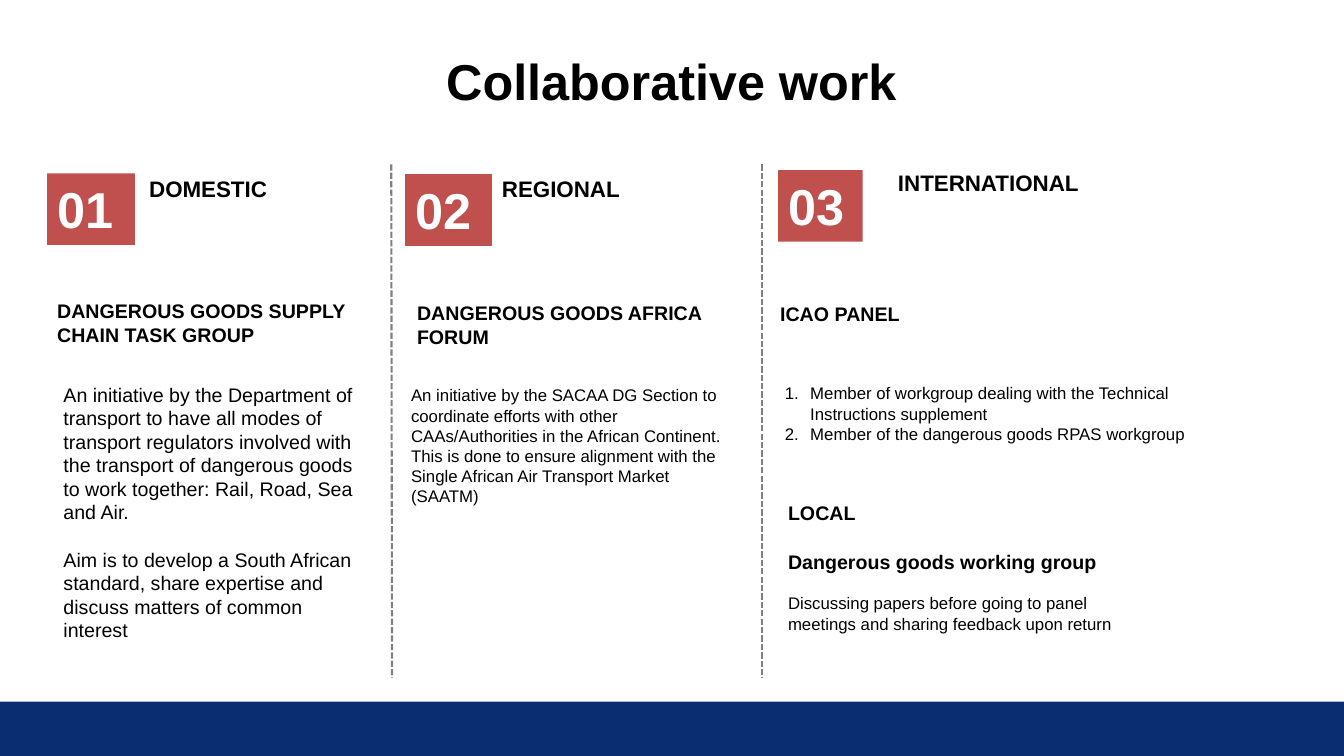
from dataclasses import dataclass

import pptx
import pptx.dml.color
import pptx.enum.dml
import pptx.enum.shapes
import pptx.enum.text
import pptx.oxml.ns
import pptx.presentation
import pptx.shapes.autoshape
import pptx.slide
import pptx.util
from lxml import etree

BLACK = pptx.dml.color.RGBColor(0x00, 0x00, 0x00)
WHITE = pptx.dml.color.RGBColor(0xFF, 0xFF, 0xFF)
RED = pptx.dml.color.RGBColor(0xC0, 0x50, 0x4D)
NAVY = pptx.dml.color.RGBColor(0x0A, 0x2C, 0x71)
GRAY = pptx.dml.color.RGBColor(0x80, 0x80, 0x80)

SLIDE_WIDTH, SLIDE_HEIGHT = 33.87, 19.05
FOOTER_TOP = 17.68
DIVIDER_TOP, DIVIDER_BOTTOM = 4.14, 17.09
DIVIDERS = ((9.86, 9.88), (19.2, 19.2))


@dataclass(frozen=True)
class Box:
    left: float
    top: float
    width: float
    height: float

    def lengths(self) -> list[pptx.util.Length]:
        return [pptx.util.Cm(value) for value in (self.left, self.top, self.width, self.height)]


@dataclass(frozen=True)
class Column:
    number: str
    badge: Box
    scope: str
    scope_box: Box
    group: str
    group_box: Box
    details: tuple[str, ...]
    details_box: Box
    details_size: float = 12
    details_gap: float = 0
    numbered: bool = False
    outlined: bool = False


COLUMNS = (
    Column(
        "01", Box(1.19, 4.37, 2.21, 1.8),
        "DOMESTIC", Box(3.51, 4.29, 6.4, 0.94),
        "DANGEROUS GOODS SUPPLY CHAIN TASK GROUP", Box(1.19, 7.42, 8.18, 1.45),
        (
            "An initiative by the Department of transport to have all modes of transport regulators "
            "involved with the transport of dangerous goods to work together: Rail, Road, Sea and Air.",
            "Aim is to develop a South African standard, share expertise and discuss matters of common interest",
        ),
        Box(1.35, 9.52, 8.18, 7.57), details_size=14, details_gap=16.8,
    ),
    Column(
        "02", Box(10.21, 4.39, 2.18, 1.8),
        "REGIONAL", Box(12.4, 4.29, 6.83, 0.94),
        "DANGEROUS GOODS AFRICA FORUM", Box(10.26, 7.47, 8.74, 1.47),
        (
            "An initiative by the SACAA DG Section to coordinate efforts with other CAAs/Authorities "
            "in the African Continent. This is done to ensure alignment with the Single African Air "
            "Transport Market (SAATM)",
        ),
        Box(10.11, 9.58, 8.76, 2.82), outlined=True,
    ),
    Column(
        "03", Box(19.61, 4.29, 2.13, 1.8),
        "INTERNATIONAL", Box(22.38, 4.14, 8.2, 0.94),
        "ICAO PANEL", Box(19.41, 7.49, 10.49, 0.86),
        (
            "Member of workgroup dealing with the Technical Instructions supplement",
            "Member of the dangerous goods RPAS workgroup",
        ),
        Box(19.53, 9.53, 11.05, 1.8), numbered=True,
    ),
)


def write_text(
    shape: pptx.shapes.autoshape.Shape,
    *texts: str,
    size: float,
    bold: bool = False,
    color: pptx.dml.color.RGBColor = BLACK,
    align: pptx.enum.text.PP_ALIGN = pptx.enum.text.PP_ALIGN.LEFT,
    gap: float = 0,
    line_spacing: float | None = None,
    numbered: bool = False,
) -> None:
    frame = shape.text_frame
    frame.word_wrap = True
    frame.auto_size = pptx.enum.text.MSO_AUTO_SIZE.SHAPE_TO_FIT_TEXT
    frame.vertical_anchor = pptx.enum.text.MSO_ANCHOR.TOP
    for index, text in enumerate(texts):
        paragraph = frame.add_paragraph() if index else frame.paragraphs[0]
        paragraph.alignment = align
        if line_spacing:
            paragraph.line_spacing = line_spacing
        if index and gap:
            paragraph.space_before = pptx.util.Pt(gap)
        if numbered:
            properties = paragraph._p.get_or_add_pPr()
            indent = pptx.util.Cm(0.64)
            properties.set("marL", str(indent))
            properties.set("indent", str(-indent))
            etree.SubElement(properties, pptx.oxml.ns.qn("a:buAutoNum"), type="arabicPeriod")
        run = paragraph.add_run()
        run.text = text
        run.font.name = "Arial"
        run.font.size = pptx.util.Pt(size)
        run.font.bold = bold
        run.font.color.rgb = color


def add_text(slide: pptx.slide.Slide, box: Box, *texts: str, **text_format) -> pptx.shapes.autoshape.Shape:
    shape = slide.shapes.add_textbox(*box.lengths())
    write_text(shape, *texts, **text_format)
    return shape


def add_rectangle(
    slide: pptx.slide.Slide, box: Box, color: pptx.dml.color.RGBColor, outlined: bool = False
) -> pptx.shapes.autoshape.Shape:
    shape = slide.shapes.add_shape(pptx.enum.shapes.MSO_SHAPE.RECTANGLE, *box.lengths())
    shape.shadow.inherit = False
    shape.fill.solid()
    shape.fill.fore_color.rgb = color
    if outlined:
        shape.line.color.rgb = color
        shape.line.width = pptx.util.Pt(0.75)
    else:
        shape.line.fill.background()
    return shape


def add_column(slide: pptx.slide.Slide, column: Column) -> None:
    add_text(slide, column.group_box, column.group, size=14, bold=True)
    add_text(
        slide, column.details_box, *column.details,
        size=column.details_size, gap=column.details_gap, numbered=column.numbered,
    )
    add_text(slide, column.scope_box, column.scope, size=16, bold=True)
    badge = add_rectangle(slide, column.badge, RED, column.outlined)
    write_text(badge, column.number, size=36, bold=True, color=WHITE)


def add_divider(slide: pptx.slide.Slide, start: float, end: float) -> None:
    points = (start, DIVIDER_TOP, end, DIVIDER_BOTTOM)
    divider = slide.shapes.add_connector(
        pptx.enum.shapes.MSO_CONNECTOR.STRAIGHT, *[pptx.util.Cm(value) for value in points]
    )
    divider.line.color.rgb = GRAY
    divider.line.width = pptx.util.Pt(1.5)
    divider.line.dash_style = pptx.enum.dml.MSO_LINE.SQUARE_DOT
    etree.SubElement(divider._element.spPr, pptx.oxml.ns.qn("a:effectLst"))


def main() -> None:
    presentation = pptx.Presentation()
    presentation.slide_width = pptx.util.Cm(SLIDE_WIDTH)
    presentation.slide_height = pptx.util.Cm(SLIDE_HEIGHT)
    slide = presentation.slides.add_slide(presentation.slide_layouts[6])

    add_rectangle(slide, Box(0, FOOTER_TOP, SLIDE_WIDTH, SLIDE_HEIGHT - FOOTER_TOP), NAVY)
    for column in COLUMNS:
        add_column(slide, column)
    add_text(
        slide, Box(0.91, 1.32, 32.03, 1.65), "Collaborative work",
        size=36, bold=True, align=pptx.enum.text.PP_ALIGN.CENTER, line_spacing=0.9,
    )
    add_text(slide, Box(19.61, 12.5, 12.14, 0.86), "LOCAL", size=14, bold=True)
    working_group = add_text(
        slide, Box(19.61, 13.72, 9.63, 2.39),
        "Dangerous goods working group",
        "Discussing papers before going to panel meetings and sharing feedback upon return",
        size=12, gap=14.4,
    )
    heading = working_group.text_frame.paragraphs[0].runs[0].font
    heading.size = pptx.util.Pt(14)
    heading.bold = True
    for start, end in DIVIDERS:
        add_divider(slide, start, end)

    presentation.save("out.pptx")


if __name__ == "__main__":
    main()
